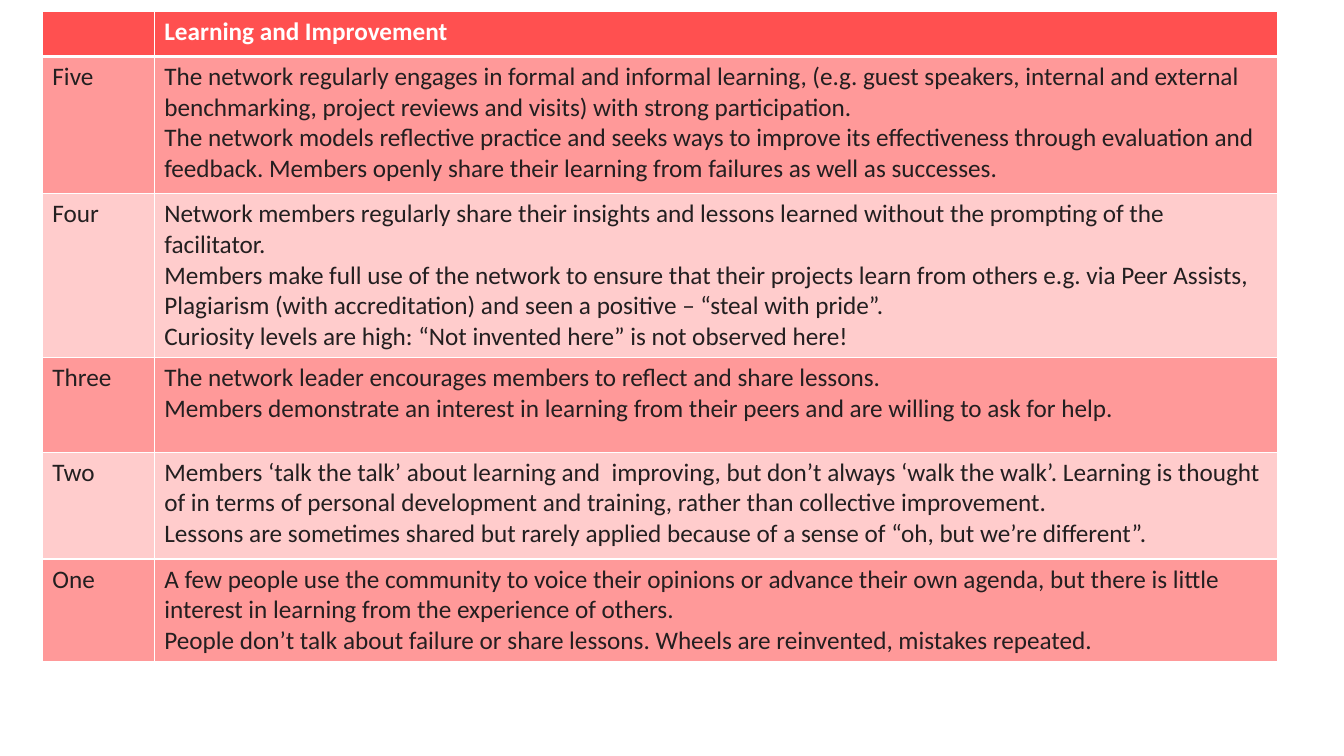
from dataclasses import dataclass

from lxml.etree import SubElement
from pptx import Presentation
from pptx.dml.color import RGBColor
from pptx.oxml.ns import qn
from pptx.table import Table, _Cell
from pptx.util import Inches, Pt


@dataclass(frozen=True)
class Theme:
    font: str = "Calibri"
    size: int = 18
    head: str = "FF5050"
    dark: str = "FF9999"
    light: str = "FFCCCC"
    ink: str = "231F20"
    white: str = "FFFFFF"
    thin: int = 1
    thick: int = 3


@dataclass(frozen=True)
class Level:
    name: str
    height: float
    lines: tuple[str, ...]


THEME = Theme()
LEFT, TOP = 0.42, 0.11
WIDTHS = (1.11, 11.14)

# Heading row, then the levels from best to worst
LEVELS = (
    Level("", 0.45, ("Learning and Improvement",)),
    Level("Five", 1.36, (
        "The network regularly engages in formal and informal learning, (e.g. guest speakers, "
        "internal and external benchmarking, project reviews and visits) with strong participation.",
        "The network models reflective practice and seeks ways to improve its effectiveness through "
        "evaluation and feedback. Members openly share their learning from failures as well as successes.",
    )),
    Level("Four", 1.62, (
        "Network members regularly share their insights and lessons learned without the prompting "
        "of the facilitator.",
        "Members make full use of the network to ensure that their projects learn from others e.g. "
        "via Peer Assists, Plagiarism (with accreditation) and seen a positive – “steal with pride”.",
        "Curiosity levels are high: “Not invented here” is not observed here!",
    )),
    Level("Three", 0.94, (
        "The network leader encourages members to reflect and share lessons.",
        "Members demonstrate an interest in learning from their peers and are willing to ask for help.",
    )),
    Level("Two", 1.06, (
        "Members ‘talk the talk’ about learning and  improving, but don’t always ‘walk the walk’. "
        "Learning is thought of in terms of personal development and training, rather than "
        "collective improvement.",
        "Lessons are sometimes shared but rarely applied because of a sense of "
        "“oh, but we’re different”.",
    )),
    Level("One", 1.02, (
        "A few people use the community to voice their opinions or advance their own agenda, but "
        "there is little interest in learning from the experience of others.",
        "People don’t talk about failure or share lessons. Wheels are reinvented, mistakes repeated.",
    )),
)


def write(cell: _Cell, lines: tuple[str, ...], *, color: str, bold: bool = False) -> None:
    cell.text = "\n".join(lines)
    for para in cell.text_frame.paragraphs:
        font = para.font
        for run in para.runs:
            font = run.font
        font.name = THEME.font
        font.size = Pt(THEME.size)
        font.bold = bold
        font.color.rgb = RGBColor.from_string(color)


def edge(cell: _Cell, *, top: int, bottom: int) -> None:
    props = cell._tc.get_or_add_tcPr()
    sides = {"L": THEME.thin, "R": THEME.thin, "T": top, "B": bottom}
    for side, width in sides.items():
        line = SubElement(props, qn(f"a:ln{side}"), w=str(Pt(width)))
        fill = SubElement(line, qn("a:solidFill"))
        SubElement(fill, qn("a:srgbClr"), val=THEME.white)


def draw(table: Table, row: int, level: Level) -> None:
    table.rows[row].height = Inches(level.height)
    head = row == 0
    shade = THEME.head if head else THEME.dark if row % 2 else THEME.light
    for col, lines in enumerate(((level.name,), level.lines)):
        cell = table.cell(row, col)
        write(cell, lines, color=THEME.white if head else THEME.ink, bold=head)
        # Borders go before the fill in the cell's properties
        edge(cell, top=THEME.thick if row == 1 else THEME.thin,
             bottom=THEME.thick if head else THEME.thin)
        cell.fill.solid()
        cell.fill.fore_color.rgb = RGBColor.from_string(shade)


def main() -> None:
    deck = Presentation()
    deck.slide_width, deck.slide_height = Inches(13.33), Inches(7.5)
    slide = deck.slides.add_slide(deck.slide_layouts[6])

    # Maturity table
    frame = slide.shapes.add_table(
        len(LEVELS), len(WIDTHS), Inches(LEFT), Inches(TOP),
        Inches(sum(WIDTHS)), Inches(sum(level.height for level in LEVELS)))
    table = frame.table
    for col, width in enumerate(WIDTHS):
        table.columns[col].width = Inches(width)
    for row, level in enumerate(LEVELS):
        draw(table, row, level)

    deck.save("out.pptx")


if __name__ == "__main__":
    main()
